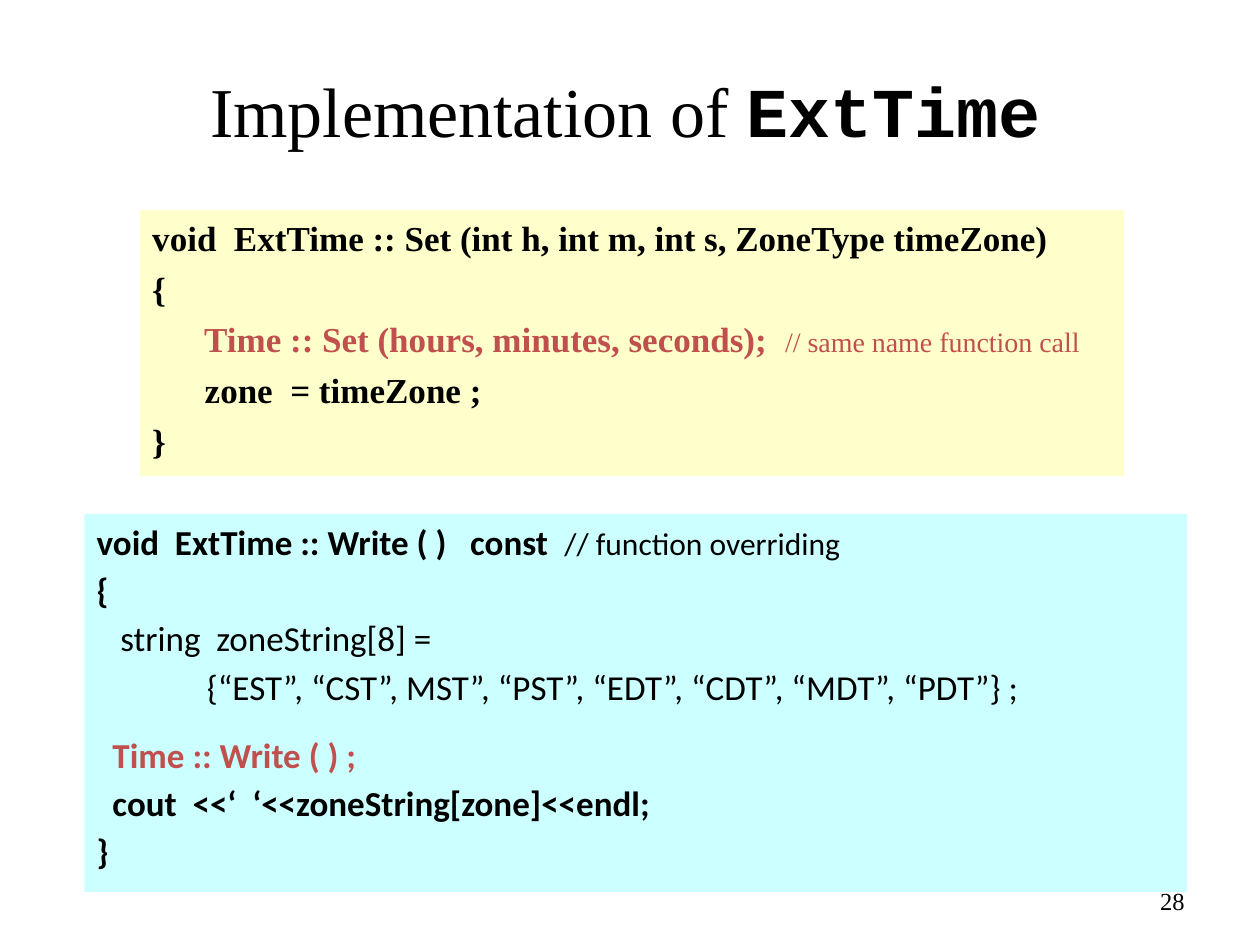
import pptx
import pptx.util
import pptx.dml.color
import pptx.enum.shapes
import pptx.enum.text

Cm = pptx.util.Cm
Pt = pptx.util.Pt
ALIGN = pptx.enum.text.PP_ALIGN
ANCHOR = pptx.enum.text.MSO_ANCHOR
SERIF = "Times New Roman"
BLACK, RED = "000000", "C0504D"


def color(code):
    """Turn a hex string into a colour."""
    return pptx.dml.color.RGBColor.from_string(code)


def style(run, face, size, bold=False, ink=BLACK):
    """Format one run."""
    font = run.font
    font.name, font.size, font.bold = face, Pt(size), bold
    font.color.rgb = color(ink)


def place(shape, box):
    """Move a shape to a box of left, top, width and height."""
    shape.left, shape.top, shape.width, shape.height = map(Cm, box)


def title(slide, box, parts):
    """Fill the title from pairs of text and font, the last one bold."""
    head = slide.shapes.title
    place(head, box)
    frame = head.text_frame
    frame.word_wrap = True
    frame.auto_size = pptx.enum.text.MSO_AUTO_SIZE.NONE
    frame.vertical_anchor = ANCHOR.BOTTOM
    para = frame.paragraphs[0]
    para.alignment = ALIGN.CENTER
    for text, face in parts:
        run = para.add_run()
        run.text = text
        style(run, face, 40, face != SERIF)


def code(slide, box, fill, face, gap, lines):
    """Draw a filled box of code; a line is its runs, indent and extra gap."""
    panel = slide.shapes.add_shape(
        pptx.enum.shapes.MSO_SHAPE.RECTANGLE, *map(Cm, box))
    panel.shadow.inherit = False
    panel.fill.solid()
    panel.fill.fore_color.rgb = color(fill)
    panel.line.fill.background()
    frame = panel.text_frame
    frame.word_wrap = True
    frame.vertical_anchor = ANCHOR.TOP
    for row, (runs, indent, extra) in enumerate(lines):
        para = frame.paragraphs[0] if row == 0 else frame.add_paragraph()
        para.alignment = ALIGN.LEFT
        para.space_before = Pt(gap + extra if row else 0)
        props = para._p.get_or_add_pPr()
        props.set("marL", str(Cm(indent or 0.95)))
        props.set("indent", str(Cm(0 if indent else -0.95)))
        for text, size, bold, ink in runs:
            run = para.add_run()
            run.text = text
            style(run, face, size, bold, ink)


def line(text, bold=True, ink=BLACK, note=None, indent=0, extra=0):
    """Describe a code line with an optional plain note of text and size."""
    runs = [(text, 20, bold, ink)]
    if note:
        runs.append((*note, False, ink))
    return runs, indent, extra


def number(slide, box, text):
    """Write the page number."""
    label = slide.shapes.add_textbox(*map(Cm, box))
    frame = label.text_frame
    frame.word_wrap = True
    frame.vertical_anchor = ANCHOR.MIDDLE
    frame.text = text
    para = frame.paragraphs[0]
    para.alignment = ALIGN.RIGHT
    style(para.runs[0], SERIF, 14)


def main():
    """Build and save the slide."""
    deck = pptx.Presentation()
    deck.slide_width, deck.slide_height = Cm(25.4), Cm(19.05)
    slide = deck.slides.add_slide(deck.slide_layouts[5])
    number(slide, (18.21, 17.65, 5.92, 1.02), "28")
    title(slide, (1.7, 0.84, 21.8, 2.34),
          [("Implementation of ", SERIF), ("ExtTime", "Courier New")])
    code(slide, (2.82, 4.24, 19.84, 5.36), "FFFFCC", SERIF, 5, [
        line("void  ExtTime :: Set (int h, int m, int s, ZoneType timeZone)"),
        line("{"),
        line("      Time :: Set (hours, minutes, seconds);  ", ink=RED,
             note=("// same name function call", 16)),
        line("      zone  = timeZone ;"),
        line("}"),
    ])
    code(slide, (1.7, 10.36, 22.23, 7.62), "CCFFFF", "Calibri", 3.6, [
        line("void  ExtTime :: Write ( )   const  ",
             note=("// function overriding", 18)),
        line("{"),
        line("   string  zoneString[8] =", bold=False),
        line("{“EST”, “CST”, MST”, “PST”, “EDT”, “CDT”, “MDT”, “PDT”} ;",
             bold=False, indent=2.22),
        line("  Time :: Write ( ) ;", ink=RED, extra=11.4),
        line("  cout  <<‘  ‘<<zoneString[zone]<<endl;"),
        line("}"),
    ])
    deck.save("out.pptx")


if __name__ == "__main__":
    main()
